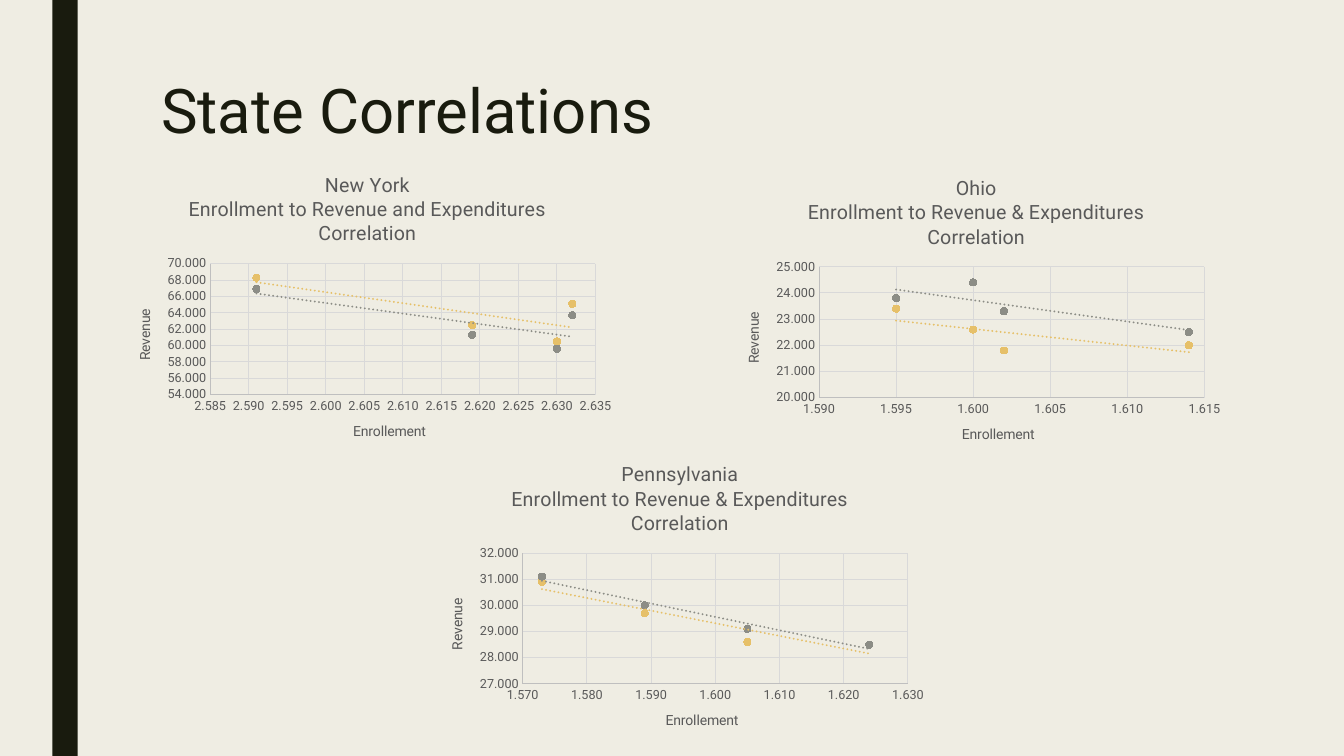
from dataclasses import dataclass

from pptx import Presentation
from pptx.chart.data import XyChartData
from pptx.dml.color import RGBColor as RGB
from pptx.enum.chart import XL_CHART_TYPE as ChartType
from pptx.enum.chart import XL_MARKER_STYLE as Marker
from pptx.enum.chart import XL_TICK_MARK as Tick
from pptx.enum.shapes import MSO_SHAPE as Shape
from pptx.enum.text import MSO_ANCHOR as Anchor
from pptx.enum.text import MSO_AUTO_SIZE as AutoSize
from pptx.enum.text import PP_ALIGN as Align
from pptx.oxml import parse_xml
from pptx.oxml.ns import nsdecls, qn
from pptx.util import Pt

COLORS = {
    "paper": "EFEDE3",
    "ink": "191B0E",
    "text": "595959",
    "axis": "BFBFBF",
    "grid": "D9D9D9",
    "gray": "8C8D86",
    "gold": "E6C069",
}
FONT = "Roboto"
CHART_W, CHART_H = 362.16, 217.44
PLOT = {"x": 0.19, "y": 0.35, "w": 0.76, "h": 0.43}


@dataclass(frozen=True)
class Scale:
    """Range and step of an axis."""

    low: float
    high: float
    step: float


@dataclass(frozen=True)
class StateChart:
    """One state's place, heading, axes and points."""

    state: str
    heading: str
    left: float
    top: float
    x_scale: Scale
    y_scale: Scale
    enrollment: tuple[float, ...]
    gray: tuple[float, ...]
    gold: tuple[float, ...]


STATES = (
    StateChart(
        "New York", "Enrollment to Revenue and Expenditures Correlation",
        81.36, 112.32, Scale(2.585, 2.635, 0.005), Scale(54, 70, 2),
        (2.63, 2.619, 2.632, 2.591),
        (59.6, 61.3, 63.7, 66.9), (60.5, 62.5, 65.1, 68.3),
    ),
    StateChart(
        "Ohio", "Enrollment to Revenue & Expenditures Correlation",
        516.24, 114.48, Scale(1.59, 1.615, 0.005), Scale(20, 25, 1),
        (1.614, 1.602, 1.6, 1.595),
        (22.5, 23.3, 24.4, 23.8), (22, 21.8, 22.6, 23.4),
    ),
    StateChart(
        "Pennsylvania", "Enrollment to Revenue & Expenditures Correlation",
        304.56, 318.96, Scale(1.57, 1.63, 0.01), Scale(27, 32, 1),
        (1.624, 1.605, 1.589, 1.573),
        (28.5, 29.1, 30, 31.1), (28.5, 28.6, 29.7, 30.9),
    ),
)


def rgb(name: str) -> RGB:
    """Return a named colour."""
    return RGB.from_string(COLORS[name])


def add_run(p, text: str, size: float, color: str) -> None:
    """Add a formatted run to a paragraph."""
    r = p.add_run()
    r.text = text
    r.font.size = Pt(size)
    r.font.name = FONT
    r.font.bold = False
    r.font.color.rgb = rgb(color)


def style_axis(axis, scale: Scale, title: str) -> None:
    """Set an axis's scale, lines, labels and title."""
    axis.minimum_scale = scale.low
    axis.maximum_scale = scale.high
    axis.major_unit = scale.step
    axis.major_tick_mark = axis.minor_tick_mark = Tick.NONE
    axis.has_major_gridlines = True
    lines = ((axis.format.line, "axis"), (axis.major_gridlines.format.line, "grid"))
    for line, color in lines:
        line.color.rgb = rgb(color)
        line.width = Pt(0.75)
    labels = axis.tick_labels
    labels.number_format = "0.000"
    labels.number_format_is_linked = False
    labels.font.size = Pt(9)
    labels.font.name = FONT
    labels.font.color.rgb = rgb("text")
    add_run(axis.axis_title.text_frame.paragraphs[0], title, 10, "text")


def style_series(series, color: str) -> None:
    """Show a series as dots with a dotted linear trend."""
    series.format.line.fill.background()
    marker = series.marker
    marker.style = Marker.CIRCLE
    marker.size = 5
    marker.format.fill.solid()
    marker.format.fill.fore_color.rgb = rgb(color)
    marker.format.line.color.rgb = rgb(color)
    trend = parse_xml(
        f'<c:trendline {nsdecls("c", "a")}><c:spPr><a:ln w="{Pt(1.5)}" cap="rnd">'
        f'<a:solidFill><a:srgbClr val="{COLORS[color]}"/></a:solidFill>'
        '<a:prstDash val="sysDot"/></a:ln></c:spPr>'
        '<c:trendlineType val="linear"/><c:dispRSqr val="0"/><c:dispEq val="0"/>'
        "</c:trendline>"
    )
    series._element.find(qn("c:xVal")).addprevious(trend)


def place_plot(chart) -> None:
    """Fix the inner plot area within its chart."""
    area = chart._chartSpace.chart.plotArea
    for old in area.findall(qn("c:layout")):
        area.remove(old)
    modes = "".join(f'<c:{k}Mode val="edge"/>' for k in ("x", "y"))
    sizes = "".join(f'<c:{k} val="{v}"/>' for k, v in PLOT.items())
    area.insert(0, parse_xml(
        f'<c:layout {nsdecls("c")}><c:manualLayout><c:layoutTarget val="inner"/>'
        f"{modes}{sizes}</c:manualLayout></c:layout>"
    ))


def add_state_chart(s, item: StateChart) -> None:
    """Draw one state's scatter chart."""
    data = XyChartData()
    for name, values in (("Series 1", item.gray), ("Series 2", item.gold)):
        points = data.add_series(name)
        for x, y in zip(item.enrollment, values):
            points.add_data_point(x, y)
    chart = s.shapes.add_chart(
        ChartType.XY_SCATTER, Pt(item.left), Pt(item.top),
        Pt(CHART_W), Pt(CHART_H), data,
    ).chart
    chart.font.size = Pt(10)
    chart.font.name = FONT
    chart.has_legend = False
    chart.has_title = True
    tf = chart.chart_title.text_frame
    add_run(tf.paragraphs[0], item.state, 14, "text")
    add_run(tf.add_paragraph(), item.heading, 14, "text")
    style_axis(chart.category_axis, item.x_scale, "Enrollement")
    style_axis(chart.value_axis, item.y_scale, "Revenue")
    body = chart.value_axis.axis_title.text_frame._txBody.find(qn("a:bodyPr"))
    body.set("rot", "-5400000")
    body.set("vert", "horz")
    chart.plots[0].vary_by_categories = False
    for series, color in zip(chart.plots[0].series, ("gray", "gold")):
        style_series(series, color)
    place_plot(chart)


def add_bar(s) -> None:
    """Draw the dark bar at the left edge."""
    sp = s.shapes.add_shape(Shape.RECTANGLE, Pt(37.44), Pt(0), Pt(18), Pt(540))
    sp.shadow.inherit = False
    sp.fill.solid()
    sp.fill.fore_color.rgb = rgb("ink")
    sp.line.fill.background()


def set_title(s, text: str) -> None:
    """Place and format the slide title."""
    sp = s.shapes.title
    sp.left, sp.top, sp.width, sp.height = Pt(108), Pt(54), Pt(756), Pt(116.64)
    tf = sp.text_frame
    tf.word_wrap = True
    tf.auto_size = AutoSize.NONE
    tf.vertical_anchor = Anchor.TOP
    p = tf.paragraphs[0]
    p.alignment = Align.LEFT
    p.line_spacing = 0.89
    add_run(p, text, 44, "ink")


def main() -> None:
    """Build and save the slide."""
    prs = Presentation()
    prs.slide_width, prs.slide_height = Pt(960), Pt(540)
    s = prs.slides.add_slide(prs.slide_layouts[5])
    s.background.fill.solid()
    s.background.fill.fore_color.rgb = rgb("paper")
    add_bar(s)
    set_title(s, "State Correlations")
    for item in STATES:
        add_state_chart(s, item)
    prs.save("out.pptx")


if __name__ == "__main__":
    main()
